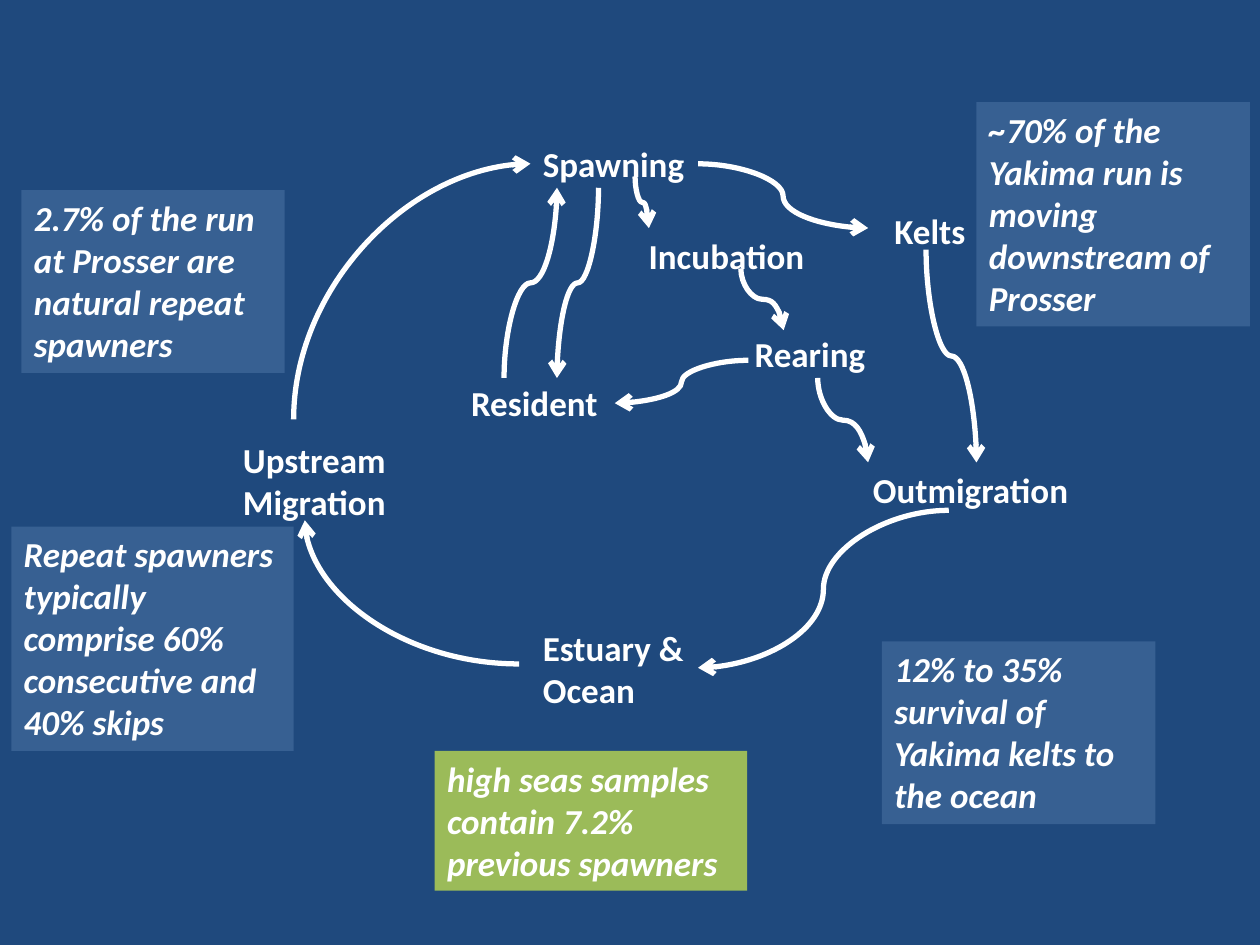
import pptx
import pptx.dml.color
import pptx.enum.shapes
import pptx.enum.text
import pptx.oxml.ns
import pptx.util
from lxml import etree
from pptx.util import Inches

WHITE = "FFFFFF"
BLUE = "376092"
GREEN = "9BBB59"


def color(hex_string):
    return pptx.dml.color.RGBColor.from_string(hex_string)


def add_label(text, left, top, width, height, fill=None):
    """Add bold white text; a filled label is an italic note."""
    box = slide.shapes.add_textbox(Inches(left), Inches(top), Inches(width), Inches(height))
    if fill:
        box.fill.solid()
        box.fill.fore_color.rgb = color(fill)
    frame = box.text_frame
    frame.text = text
    frame.word_wrap = True
    frame.auto_size = pptx.enum.text.MSO_AUTO_SIZE.SHAPE_TO_FIT_TEXT
    font = frame.paragraphs[0].runs[0].font
    font.name = "Calibri"
    font.size = pptx.util.Pt(20)
    font.bold = True
    font.italic = bool(fill)
    font.color.rgb = color(WHITE)


presentation = pptx.Presentation()
presentation.slide_width = Inches(10)
presentation.slide_height = Inches(7.5)
slide = presentation.slides.add_slide(presentation.slide_layouts[6])
slide.background.fill.solid()
slide.background.fill.fore_color.rgb = color("1F497D")

life_stages = [
    ("Spawning", 4.21, 1.08, 1.35, 0.44),
    ("Incubation", 5.05, 1.81, 1.5, 0.44),
    ("Kelts", 7, 1.61, 0.92, 0.44),
    ("Rearing", 5.89, 2.59, 1.15, 0.44),
    ("Outmigration", 6.83, 3.67, 1.85, 0.44),
    ("Estuary & Ocean", 4.21, 4.92, 1.35, 0.77),
    ("Resident", 3.64, 2.98, 1.3, 0.44),
    ("Upstream Migration", 1.83, 3.43, 1.4, 0.77),
]
for stage in life_stages:
    add_label(*stage)

# Start x, start y, end x, end y, direction at the start, shape of the curve
arrows = [
    (5.54, 1.3, 6.89, 1.81, "horizontal", "curvedConnector3"),
    (5.04, 1.4, 5.15, 1.81, "vertical", "curvedConnector3"),
    (5.88, 2.13, 6.22, 2.62, "vertical", "curvedConnector3"),
    (6.49, 3, 6.89, 3.67, "vertical", "curvedConnector3"),
    (7.35, 1.98, 7.75, 3.67, "vertical", "curvedConnector3"),
    (7.53, 4.05, 5.54, 5.3, "horizontal", "curvedConnector3"),
    (4.12, 5.27, 2.42, 4.13, "horizontal", "curvedConnector2"),
    (2.33, 3.33, 4.21, 1.3, "vertical", "curvedConnector2"),
    (4, 3, 4.42, 1.49, "vertical", "curvedConnector3"),
    (4.75, 1.49, 4.42, 3, "vertical", "curvedConnector3"),
    (5.94, 2.86, 4.88, 3.2, "horizontal", "curvedConnector3"),
]
for start_x, start_y, end_x, end_y, direction, preset in arrows:
    center_x, center_y = (start_x + end_x) / 2, (start_y + end_y) / 2
    half_x, half_y = (end_x - start_x) / 2, (end_y - start_y) / 2
    if direction == "vertical":
        # Lay the curve on its side; the quarter turn below stands it up again
        half_x, half_y = half_y, -half_x
    connector = slide.shapes.add_connector(
        pptx.enum.shapes.MSO_CONNECTOR.CURVE,
        Inches(center_x - half_x), Inches(center_y - half_y),
        Inches(center_x + half_x), Inches(center_y + half_y))
    connector.line.color.rgb = color(WHITE)
    connector.line.width = pptx.util.Pt(3)
    properties = connector._element.spPr
    if direction == "vertical":
        properties.find(pptx.oxml.ns.qn("a:xfrm")).set("rot", str(90 * 60000))
    properties.find(pptx.oxml.ns.qn("a:prstGeom")).set("prst", preset)
    line = properties.find(pptx.oxml.ns.qn("a:ln"))
    etree.SubElement(line, pptx.oxml.ns.qn("a:tailEnd"), type="arrow")
    etree.SubElement(properties, pptx.oxml.ns.qn("a:effectLst"))

notes = [
    ("~70% of the Yakima run is moving downstream of Prosser", 7.75, 0.81, 2.17, 1.78, BLUE),
    ("high seas samples contain 7.2% previous spawners", 3.45, 5.96, 2.48, 1.11, GREEN),
    ("2.7% of the run at Prosser are natural repeat spawners", 0.17, 1.51, 2.09, 1.45, BLUE),
    ("12% to 35% survival of Yakima kelts to the ocean", 7, 5.09, 2.17, 1.45, BLUE),
    ("Repeat spawners typically comprise 60% consecutive and 40% skips",
     0.09, 4.18, 2.24, 1.78, BLUE),
]
for note in notes:
    add_label(*note)

presentation.save("out.pptx")
